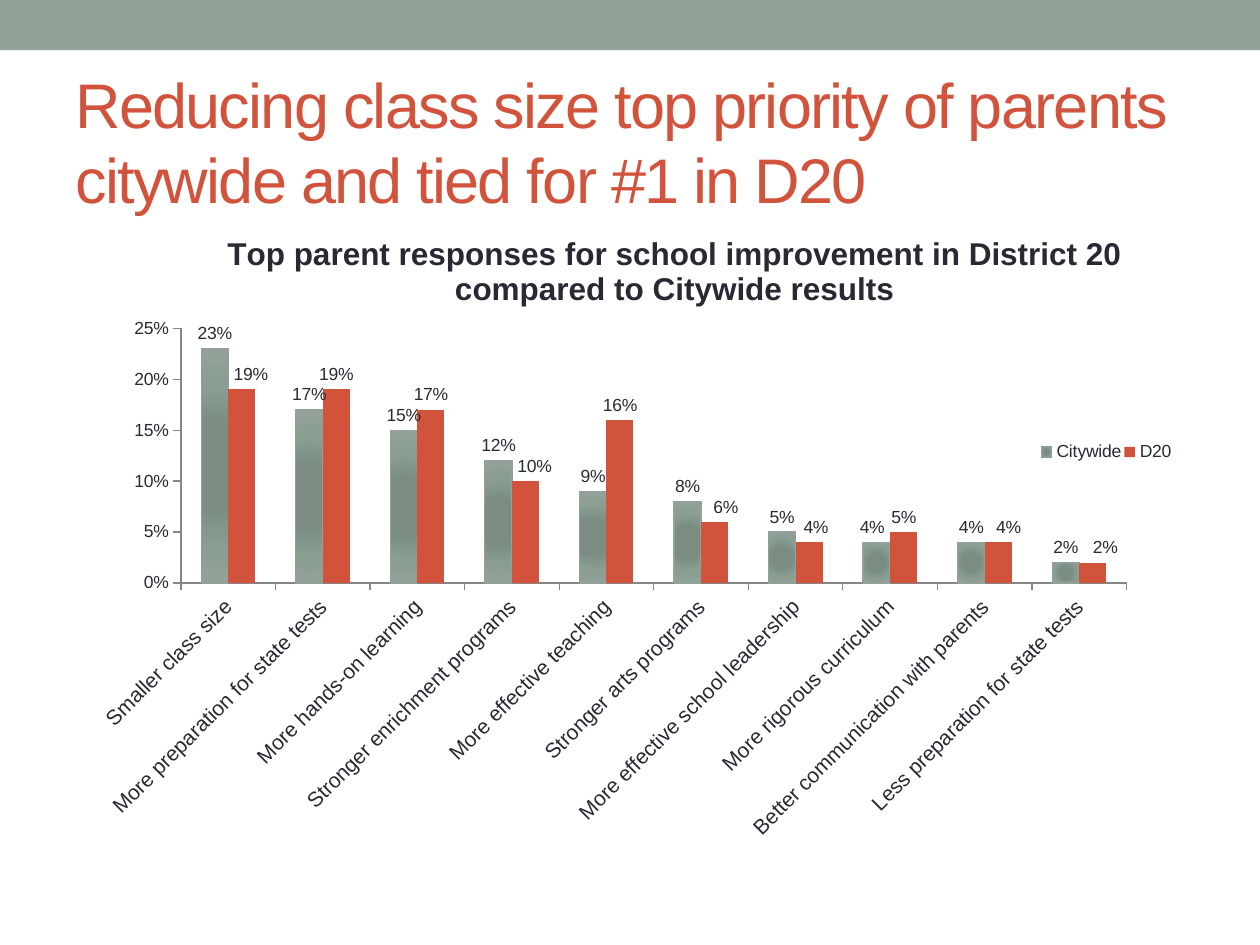
from lxml.etree import SubElement
from pptx import Presentation
from pptx.chart.data import CategoryChartData
from pptx.dml.color import RGBColor
from pptx.enum.chart import XL_CHART_TYPE as ChartType, XL_LABEL_POSITION as LabelPos
from pptx.enum.chart import XL_LEGEND_POSITION as LegendPos, XL_TICK_MARK as Tick
from pptx.enum.shapes import MSO_SHAPE as Shape
from pptx.enum.text import MSO_ANCHOR as Anchor
from pptx.oxml import parse_xml
from pptx.oxml.ns import nsdecls, qn
from pptx.util import Inches, Pt

WIDTH, HEIGHT = Inches(10), Inches(7.5)
FONT = "Arial"
PERCENT = '0"%"'
COLORS = {"sage": "93A299", "brick": "D2533C", "ink": "292934", "axis": "868686"}
SAGE_GLOW = [(0, "7B8E82"), (34, "7B8D83"), (70, "8A9E92"), (100, "93A299")]

RESPONSES = [
    ("Smaller class size", 23, 19),
    ("More preparation for state tests", 17, 19),
    ("More hands-on learning", 15, 17),
    ("Stronger enrichment programs", 12, 10),
    ("More effective teaching", 9, 16),
    ("Stronger arts programs", 8, 6),
    ("More effective school leadership", 5, 4),
    ("More rigorous curriculum", 4, 5),
    ("Better communication with parents", 4, 4),
    ("Less preparation for state tests", 2, 2),
]
CITYWIDE_NUDGES = {7: -0.004}
D20_NUDGES = {0: 0.008, 3: 0.008, 5: 0.01, 6: 0.006, 8: 0.009, 9: 0.011}


def rgb(name):
    return RGBColor.from_string(COLORS[name])


def style(font, size, color="ink", bold=False):
    font.name, font.size, font.bold = FONT, Pt(size), bold
    font.color.rgb = rgb(color)


def share(left, top, width, height):
    return (int(WIDTH * left), int(HEIGHT * top), int(WIDTH * width), int(HEIGHT * height))


def manual_layout(**settings):
    layout = parse_xml(f'<c:layout {nsdecls("c")}><c:manualLayout/></c:layout>')
    for tag, value in settings.items():
        SubElement(layout[0], qn(f"c:{tag}")).set("val", str(value))
    return layout


def add_band(slide, box):
    band = slide.shapes.add_shape(Shape.RECTANGLE, *box)
    band.shadow.inherit = False
    band.fill.solid()
    band.fill.fore_color.rgb = rgb("sage")
    band.line.fill.background()


def add_headline(slide, box, text):
    frame = slide.shapes.add_textbox(*box).text_frame
    frame.word_wrap = True
    frame.vertical_anchor = Anchor.MIDDLE
    headline = frame.paragraphs[0]
    headline.text = text
    style(headline.font, 36, "brick")
    headline.runs[0].font._element.set("spc", "-100")


def glow_fill(series):
    stops = "".join(
        f'<a:gs pos="{pos * 1000}"><a:srgbClr val="{color}"/></a:gs>' for pos, color in SAGE_GLOW
    )
    edges = " ".join(f'{side}="100000"' for side in "ltrb")
    gradient = parse_xml(
        f'<a:gradFill {nsdecls("a")} rotWithShape="1"><a:gsLst>{stops}</a:gsLst>'
        f'<a:path path="circle"><a:fillToRect {edges}/></a:path></a:gradFill>'
    )
    series._element.get_or_add_spPr().insert(0, gradient)
    series.format.line.color.rgb = rgb("sage")
    series.format.line.width = Pt(0.75)


def label_series(series, nudges):
    labels = series.data_labels
    labels.show_value = True
    labels.position = LabelPos.OUTSIDE_END
    labels.number_format, labels.number_format_is_linked = PERCENT, False
    style(labels.font, 10)
    for index, shift in nudges.items():
        series.points[index].data_label.position = LabelPos.OUTSIDE_END
    for label in labels._element.findall(qn("c:dLbl")):
        index = label.find(qn("c:idx"))
        index.addnext(manual_layout(x=nudges[int(index.get("val"))], y=0))


def style_axis(axis, size):
    axis.has_major_gridlines = False
    axis.major_tick_mark, axis.minor_tick_mark = Tick.OUTSIDE, Tick.NONE
    axis.format.line.color.rgb = rgb("axis")
    axis.format.line.width = Pt(0.75)
    style(axis.tick_labels.font, size)


def add_response_chart(slide, box, title):
    categories, citywide, district = zip(*RESPONSES)
    data = CategoryChartData(number_format=PERCENT)
    data.categories = categories
    data.add_series("Citywide", citywide)
    data.add_series("D20", district)
    chart = slide.shapes.add_chart(ChartType.COLUMN_CLUSTERED, *box, data).chart
    style(chart.font, 10)

    chart.has_title = True
    heading = chart.chart_title.text_frame.paragraphs[0]
    heading.text = title
    style(heading.font, 18, bold=True)
    chart_title = chart.chart_title._element
    for automatic in chart_title.findall(qn("c:layout")):
        chart_title.remove(automatic)
    chart_title.find(qn("c:tx")).addnext(
        manual_layout(xMode="edge", yMode="edge", x=0.14, y=0.01)
    )

    plot = chart.plots[0]
    plot.gap_width, plot.overlap = 150, 0
    plot.vary_by_categories = False
    area = chart._chartSpace.chart.plotArea
    for automatic in area.findall(qn("c:layout")):
        area.remove(automatic)
    area.insert(0, manual_layout(layoutTarget="inner", xMode="edge", yMode="edge",
                                 x=0.104, y=0.161, w=0.834, h=0.379))

    style_axis(chart.category_axis, 12)
    chart.category_axis._element.find(qn("c:txPr")).find(qn("a:bodyPr")).set("rot", "-2700000")
    scale = chart.value_axis
    style_axis(scale, 10)
    scale.minimum_scale, scale.maximum_scale, scale.major_unit = 0, 25, 5
    scale.tick_labels.number_format = PERCENT
    scale.tick_labels.number_format_is_linked = False

    citywide_bars, district_bars = plot.series
    glow_fill(citywide_bars)
    district_bars.format.fill.solid()
    district_bars.format.fill.fore_color.rgb = rgb("brick")
    label_series(citywide_bars, CITYWIDE_NUDGES)
    label_series(district_bars, D20_NUDGES)

    chart.has_legend = True
    legend = chart.legend
    legend.position = LegendPos.RIGHT
    legend.include_in_layout = False
    style(legend.font, 10)
    for automatic in legend._element.findall(qn("c:layout")):
        legend._element.remove(automatic)
    legend._element.find(qn("c:legendPos")).addnext(
        manual_layout(xMode="edge", yMode="edge", x=0.86, y=0.32, w=0.12, h=0.05)
    )


def main():
    deck = Presentation()
    deck.slide_width, deck.slide_height = WIDTH, HEIGHT
    slide = deck.slides.add_slide(deck.slide_layouts[6])
    add_band(slide, share(0, 0, 1, 0.053))
    add_headline(slide, share(0.05, 0.077, 0.9, 0.144),
                 "Reducing class size top priority of parents citywide and tied for #1 in D20")
    add_response_chart(slide, share(0.05, 0.233, 0.9, 0.711),
                       "Top parent responses for school improvement in District 20 "
                       "compared to Citywide results")
    deck.save("out.pptx")


if __name__ == "__main__":
    main()
